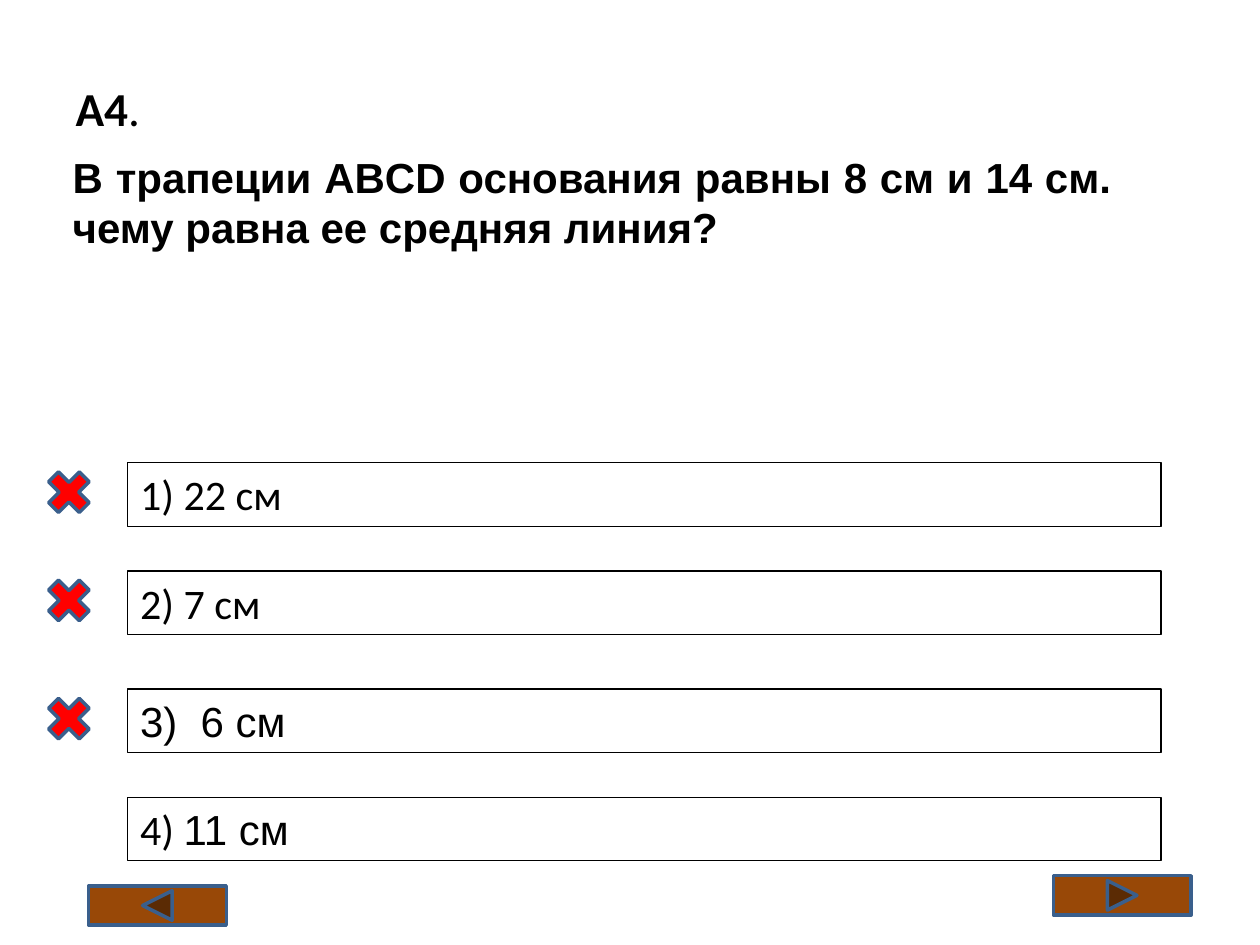
import pptx
import pptx.util
from pptx.dml.color import RGBColor
from pptx.enum.shapes import MSO_SHAPE
from pptx.enum.text import MSO_ANCHOR, PP_ALIGN

Pt = pptx.util.Pt
BLACK = RGBColor(0x00, 0x00, 0x00)
RED = RGBColor(0xFF, 0x00, 0x00)
BROWN = RGBColor(0x98, 0x48, 0x07)
BLUE = RGBColor(0x3A, 0x5F, 0x8C)


def add_run(p, text, font, size=24, bold=False):
    r = p.add_run()
    r.text = text
    r.font.name = font
    r.font.size = Pt(size)
    r.font.bold = bold
    r.font.color.rgb = BLACK


def add_icon(s, kind, left, top, width, height, color):
    sp = s.shapes.add_shape(kind, Pt(left), Pt(top), Pt(width), Pt(height))
    sp.shadow.inherit = False
    sp.fill.solid()
    sp.fill.fore_color.rgb = color
    sp.line.color.rgb = BLUE
    sp.line.width = Pt(2)


prs = pptx.Presentation()
prs.slide_width, prs.slide_height = Pt(720), Pt(540)
s = prs.slides.add_slide(prs.slide_layouts[5])

# Question number
title = s.shapes.title
title.left, title.top, title.width, title.height = Pt(36), Pt(21.6), Pt(648), Pt(80)
title.text_frame.vertical_anchor = MSO_ANCHOR.MIDDLE
p = title.text_frame.paragraphs[0]
p.alignment = PP_ALIGN.JUSTIFY
add_run(p, "А4", "Calibri", 27, True)
add_run(p, ".", "Calibri", 27)

# Question
question = s.shapes.add_textbox(Pt(34.5), Pt(82.8), Pt(607.7), Pt(65.5))
question.text_frame.word_wrap = True
p = question.text_frame.paragraphs[0]
p.alignment = PP_ALIGN.JUSTIFY
add_run(p, "В трапеции ABCD основания равны 8 см и 14 см. чему равна ее средняя линия?",
        "Arial", bold=True)

# Answers: top, correctness, and text runs with their fonts
answers = [
    (264.4, False, [("1) 22 см", "Calibri")]),
    (326.2, False, [("2) 7 см", "Calibri")]),
    (393.8, False, [("3)  6 см", "Arial")]),
    (455.6, True, [("4) ", "Calibri"), ("11 см", "Arial")]),
]
for top, correct, runs in answers:
    sp = s.shapes.add_shape(MSO_SHAPE.RECTANGLE, Pt(73), Pt(top), Pt(590.5), Pt(36.3))
    sp.shadow.inherit = False
    sp.fill.background()
    sp.line.color.rgb = BLACK
    sp.line.width = Pt(0.75)
    tf = sp.text_frame
    tf.word_wrap = True
    tf.vertical_anchor = MSO_ANCHOR.TOP
    p = tf.paragraphs[0]
    p.alignment = PP_ALIGN.LEFT
    for text, font in runs:
        add_run(p, text, font)
    if not correct:
        add_icon(s, MSO_SHAPE.MATH_MULTIPLY, 22.5, top, 33.75, 33.75, RED)

# Navigation buttons
for kind, left, top in [
    (MSO_SHAPE.ACTION_BUTTON_FORWARD_OR_NEXT, 601.9, 500.4),
    (MSO_SHAPE.ACTION_BUTTON_BACK_OR_PREVIOUS, 50.6, 506.2),
]:
    add_icon(s, kind, left, top, 78.75, 22.5, BROWN)

prs.save("out.pptx")
